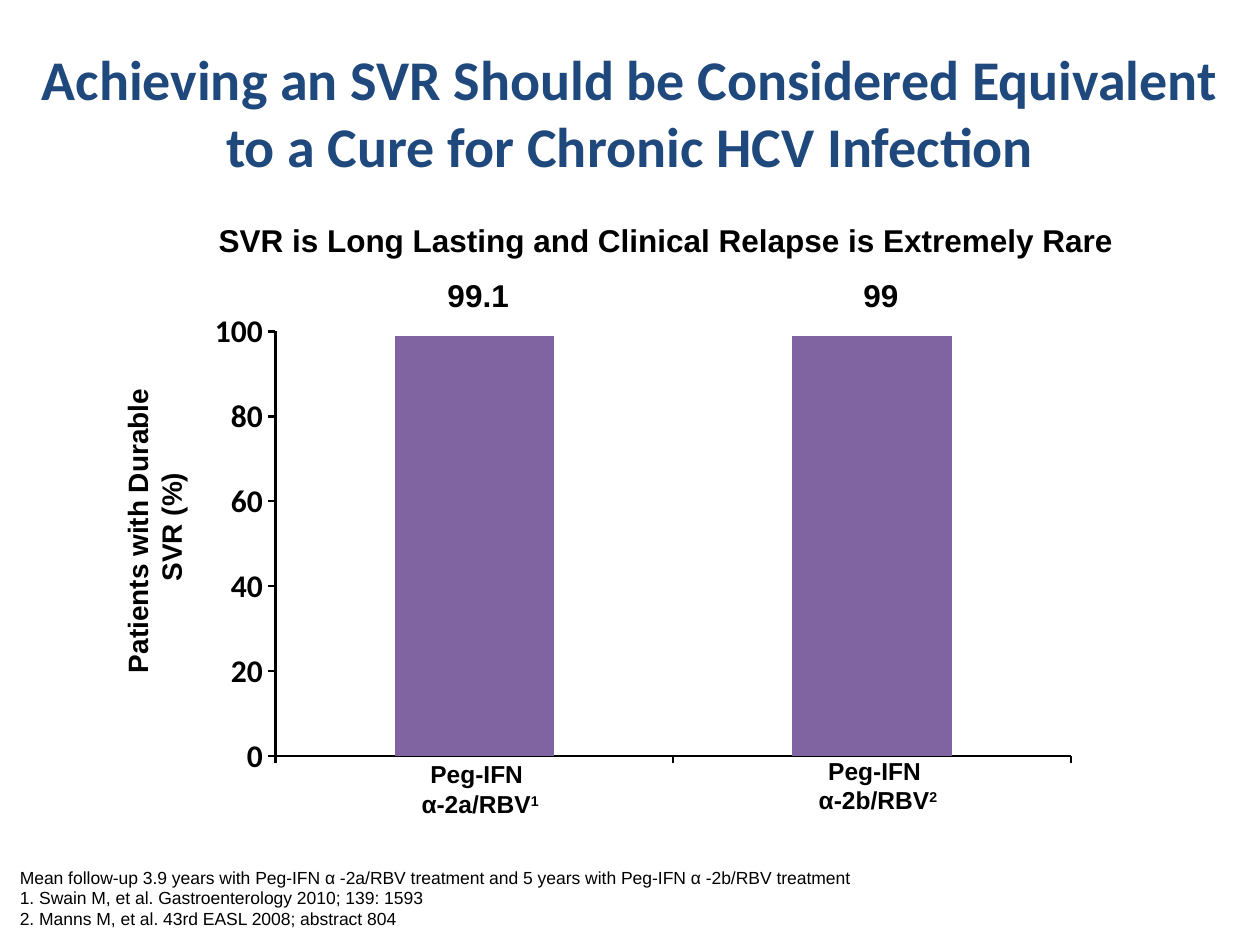
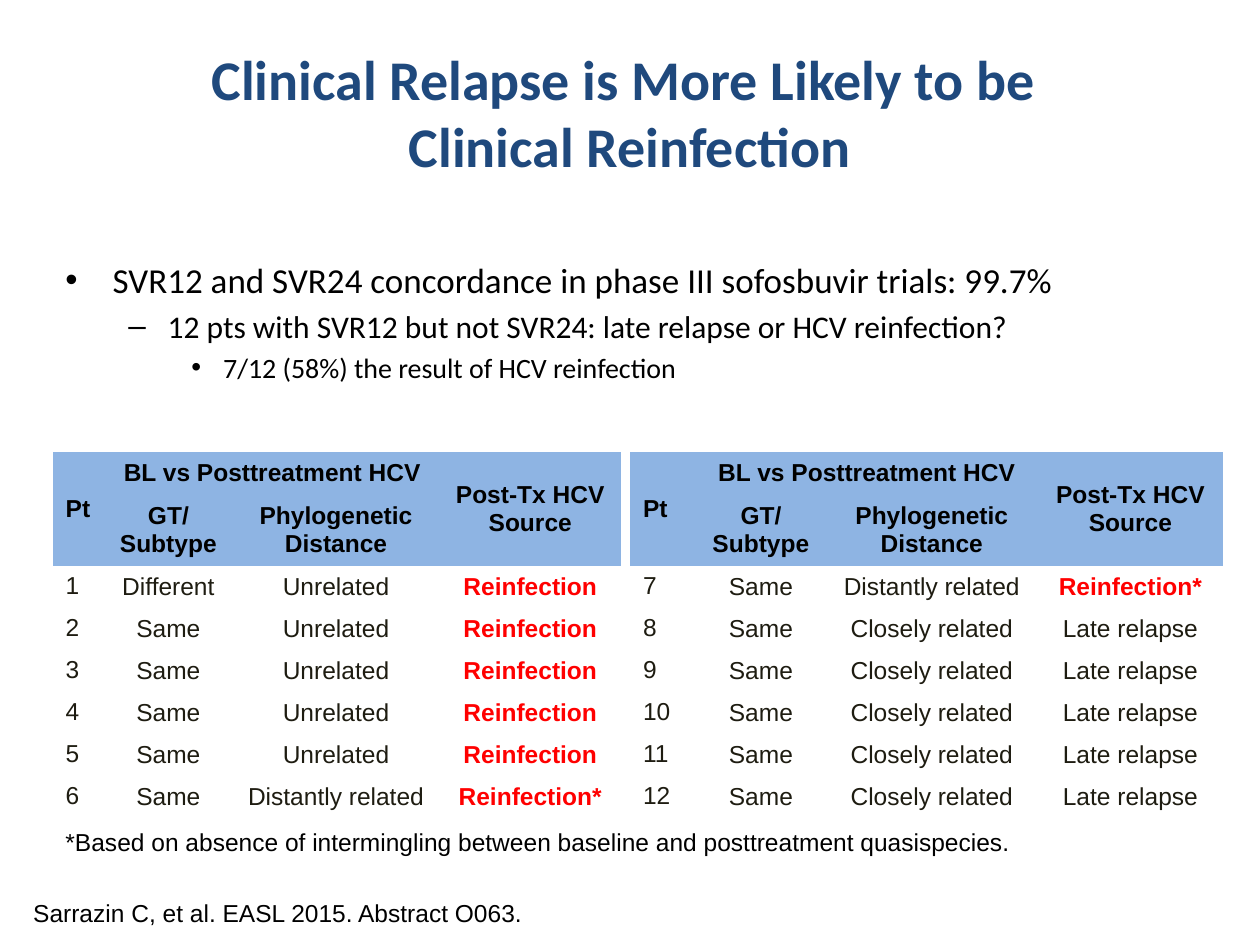
import pptx
import pptx.chart.data
import pptx.dml.color
import pptx.enum.chart
import pptx.enum.text
import pptx.oxml
import pptx.oxml.ns
import pptx.util
from pptx.util import Cm, Pt

COLORS = {
    "title": "1F497D",
    "text": "000000",
    "cell": "1E1C11",
    "alert": "FF0000",
    "header": "8EB4E3",
    "body": "FFFFFF",
    "bar": "8064A2",
}
ALIGN = pptx.enum.text.PP_ALIGN
ANCHOR = pptx.enum.text.MSO_ANCHOR
TITLE_ONLY = 5
NO_STYLE_NO_GRID = "{2D5ABB26-0587-4C30-8999-92F81FD0307C}"


def rgb(name):
    return pptx.dml.color.RGBColor.from_string(COLORS[name])


def set_font(font, size, color="text", bold=False, name="Arial"):
    font.name = name
    font.size = Pt(size)
    font.bold = bold
    font.color.rgb = rgb(color)


def add_title_slide(prs, title, box):
    """Add a title-only slide; box is left, top, width, height in cm."""
    s = prs.slides.add_slide(prs.slide_layouts[TITLE_ONLY])
    sp = s.shapes.title
    sp.left, sp.top, sp.width, sp.height = map(Cm, box)
    tf = sp.text_frame
    tf.word_wrap = True
    tf.vertical_anchor = ANCHOR.TOP
    p = tf.paragraphs[0]
    p.text = title
    p.alignment = ALIGN.CENTER
    set_font(p.font, 32, "title", True, "Calibri")
    return s


def add_text(s, box, lines, size, bold=False, align=ALIGN.LEFT,
             anchor=ANCHOR.TOP, insets=(0.25, 0.13, 0.25, 0.13)):
    sp = s.shapes.add_textbox(*map(Cm, box))
    tf = sp.text_frame
    tf.word_wrap = True
    tf.vertical_anchor = anchor
    tf.margin_left, tf.margin_top, tf.margin_right, tf.margin_bottom = map(Cm, insets)
    for i, line in enumerate(lines):
        p = tf.add_paragraph() if i else tf.paragraphs[0]
        p.text = line
        p.alignment = align
        set_font(p.font, size, bold=bold)
    return sp


def add_durability_chart(s, box, bars):
    """Draw the column chart with its value, category and axis labels."""
    left, top, width, height = box
    x, y, w, h = 1.56, 0.58, 16.04, 8.56  # plot area within the box, in cm

    data = pptx.chart.data.CategoryChartData()
    data.categories = [" " for _ in bars]
    data.add_series("Series 1", [value for value, _, _, _ in bars])
    chart = s.shapes.add_chart(pptx.enum.chart.XL_CHART_TYPE.COLUMN_CLUSTERED,
                               *map(Cm, box), data).chart
    chart.has_legend = False
    chart.has_title = False
    set_font(chart.font, 18, name="Calibri")
    plot = chart.plots[0]
    plot.gap_width = 150
    plot.vary_by_categories = False
    fill = plot.series[0].format.fill
    fill.solid()
    fill.fore_color.rgb = rgb("bar")

    for axis in (chart.category_axis, chart.value_axis):
        axis.has_major_gridlines = False
        axis.major_tick_mark = pptx.enum.chart.XL_TICK_MARK.OUTSIDE
        axis.format.line.color.rgb = rgb("text")
        axis.format.line.width = Pt(1.5)
    chart.category_axis.tick_label_position = pptx.enum.chart.XL_TICK_LABEL_POSITION.NONE
    axis = chart.value_axis
    axis.minimum_scale, axis.maximum_scale, axis.major_unit = 0, 100, 20
    set_font(axis.tick_labels.font, 18, bold=True, name="Calibri")
    set_plot_layout(chart, x / width, y / height, w / width, h / height)

    for i, (_, label, drug, ref) in enumerate(bars):
        center = left + x + w * (i + 0.5) / len(bars) + 0.12
        add_text(s, (center - 1.14 + 0.1 * i, top - 0.66, 2.2, 1.17), [label], 18, True,
                 ALIGN.CENTER)
        sp = add_text(s, (center - 1.48, top + 9.21 - 0.07 * i, 2.96, 1.19), [drug], 14,
                      True, ALIGN.CENTER, insets=(0, 0, 0, 0))
        r = sp.text_frame.paragraphs[0].add_run()
        r.text = ref
        r._r.get_or_add_rPr().set("baseline", "30000")

    sp = add_text(s, (left - 4.73, top + 3.84, 7.7, 1.37),
                  ["Patients with Durable \nSVR (%)"], 16, True, ALIGN.CENTER,
                  insets=(0, 0, 0, 0))
    sp.rotation = 270


def set_plot_layout(chart, x, y, w, h):
    """Fix the inner plot area, given as shares of the chart."""
    area = chart._chartSpace.chart.plotArea
    for old in area.findall(pptx.oxml.ns.qn("c:layout")):
        area.remove(old)
    area.insert(0, pptx.oxml.parse_xml(
        f'<c:layout {pptx.oxml.ns.nsdecls("c")}><c:manualLayout>'
        '<c:layoutTarget val="inner"/><c:xMode val="edge"/><c:yMode val="edge"/>'
        f'<c:x val="{x}"/><c:y val="{y}"/><c:w val="{w}"/><c:h val="{h}"/>'
        '</c:manualLayout></c:layout>'))


def add_bullets(s, box, items):
    """Add one paragraph per item, each one level deeper than the last."""
    sp = add_text(s, box, items, 20)
    styles = [(20, "•", 0.95, 0.95), (18, "–", 2.06, 0.79), (16, "•", 3.18, 0.64)]
    for level, (p, style) in enumerate(zip(sp.text_frame.paragraphs, styles)):
        size, char, margin, hang = style
        p.level = level
        p.space_before = Pt(size * 0.2)
        set_font(p.font, size, name="Calibri")
        pPr = p._p.get_or_add_pPr()
        pPr.set("marL", str(Cm(margin)))
        pPr.set("indent", str(-Cm(hang)))
        marks = [pptx.oxml.parse_xml(f'<a:{tag} {pptx.oxml.ns.nsdecls("a")} {attr}/>')
                 for tag, attr in (("buFont", 'typeface="Arial"'),
                                   ("buChar", f'char="{char}"'))]
        at = pPr.index(pPr.find(pptx.oxml.ns.qn("a:defRPr")))
        pPr[at:at] = marks


def fill_cell(cell, text, fill, color="text", bold=False, align=ALIGN.CENTER,
              anchor=ANCHOR.MIDDLE):
    cell.fill.solid()
    cell.fill.fore_color.rgb = rgb(fill)
    cell.vertical_anchor = anchor
    p = cell.text_frame.paragraphs[0]
    p.text = text
    p.alignment = align
    set_font(p.font, 14, color, bold)


def add_patient_table(s, left, top, widths, first_patient, patients):
    heights = [0.84, 1.43] + [0.84] * len(patients)
    tbl = s.shapes.add_table(len(heights), len(widths), Cm(left), Cm(top),
                             Cm(sum(widths)), Cm(sum(heights))).table
    tbl.first_row = tbl.horz_banding = False
    tbl._tbl.tblPr[0].text = NO_STYLE_NO_GRID
    for col, width in zip(tbl.columns, widths):
        col.width = Cm(width)
    for row, height in zip(tbl.rows, heights):
        row.height = Cm(height)

    headers = [["Pt", "BL vs Posttreatment HCV", "", "Post-Tx HCV Source"],
               ["", "GT/ Subtype", "Phylogenetic Distance", ""]]
    for r, row in enumerate(headers):
        for c, text in enumerate(row):
            fill_cell(tbl.cell(r, c), text, "header", bold=True,
                      align=ALIGN.CENTER if c else ALIGN.LEFT)
    for start, end in (((0, 0), (1, 0)), ((0, 1), (0, 2)), ((0, 3), (1, 3))):
        tbl.cell(*start).merge(tbl.cell(*end))

    for i, findings in enumerate(patients):
        r = i + len(headers)
        fill_cell(tbl.cell(r, 0), str(first_patient + i), "body", "cell",
                  align=ALIGN.LEFT, anchor=ANCHOR.TOP)
        for c, text in enumerate(findings, 1):
            alert = text.startswith("Reinfection")
            fill_cell(tbl.cell(r, c), text, "body", "alert" if alert else "cell", alert)


def build_durability_slide(prs):
    s = add_title_slide(prs, "Achieving an SVR Should be Considered Equivalent "
                        "to a Cure for Chronic HCV Infection", (0, 0.76, 25.4, 3.18))
    add_durability_chart(s, (3.99, 6.1, 17.96, 10.36),
                         [(99, "99.1", "Peg-IFN \nα-2a/RBV", "1"),
                          (99, "99", "Peg-IFN \nα-2b/RBV", "2")])
    add_text(s, (3.67, 4.32, 19.51, 1.12),
             ["SVR is Long Lasting and Clinical Relapse is Extremely Rare"], 18, True,
             ALIGN.CENTER)
    follow_up = ["Mean follow-up 3.9 years with Peg-IFN α -2a/RBV treatment "
                 "and 5 years with Peg-IFN α -2b/RBV treatment"]
    references = ["1. Swain M, et al. Gastroenterology 2010; 139: 1593",
                  "2. Manns M, et al. 43rd EASL 2008; abstract 804"]
    for top, height, lines in ((17.2, 0.84, follow_up), (17.44, 1.42, references)):
        add_text(s, (0.4, top, 23.67, height), lines, 10, anchor=ANCHOR.BOTTOM,
                 insets=(0, 0.13, 0.13, 0.13))


def build_reinfection_slide(prs):
    s = add_title_slide(prs, "Clinical Relapse is More Likely to be \n"
                        "Clinical Reinfection", (1.27, 0.76, 22.86, 3.18))
    add_bullets(s, (1.07, 5.08, 23.5, 4.27),
                ["SVR12 and SVR24 concordance in phase III sofosbuvir trials: 99.7%",
                 "12 pts with SVR12 but not SVR24: late relapse or HCV reinfection?",
                 "7/12 (58%) the result of HCV reinfection"])
    distant = ("Same", "Distantly related", "Reinfection*")
    add_patient_table(s, 1.07, 9.12, (1.04, 2.57, 4.19, 3.64), 1,
                      [("Different", "Unrelated", "Reinfection")]
                      + [("Same", "Unrelated", "Reinfection")] * 4 + [distant])
    add_patient_table(s, 12.71, 9.12, (1.32, 2.62, 4.27, 3.74), 7,
                      [distant] + [("Same", "Closely related", "Late relapse")] * 5)
    add_text(s, (1.07, 16.54, 22.35, 0.86),
             ["*Based on absence of intermingling between baseline and "
              "posttreatment quasispecies."], 14)
    add_text(s, (0.42, 17.96, 23.77, 0.86),
             ["Sarrazin C, et al. EASL 2015. Abstract O063."], 14, anchor=ANCHOR.BOTTOM)


def main():
    prs = pptx.Presentation()
    prs.slide_width, prs.slide_height = Cm(25.4), Cm(19.05)
    build_durability_slide(prs)
    build_reinfection_slide(prs)
    prs.save("out.pptx")


if __name__ == "__main__":
    main()
